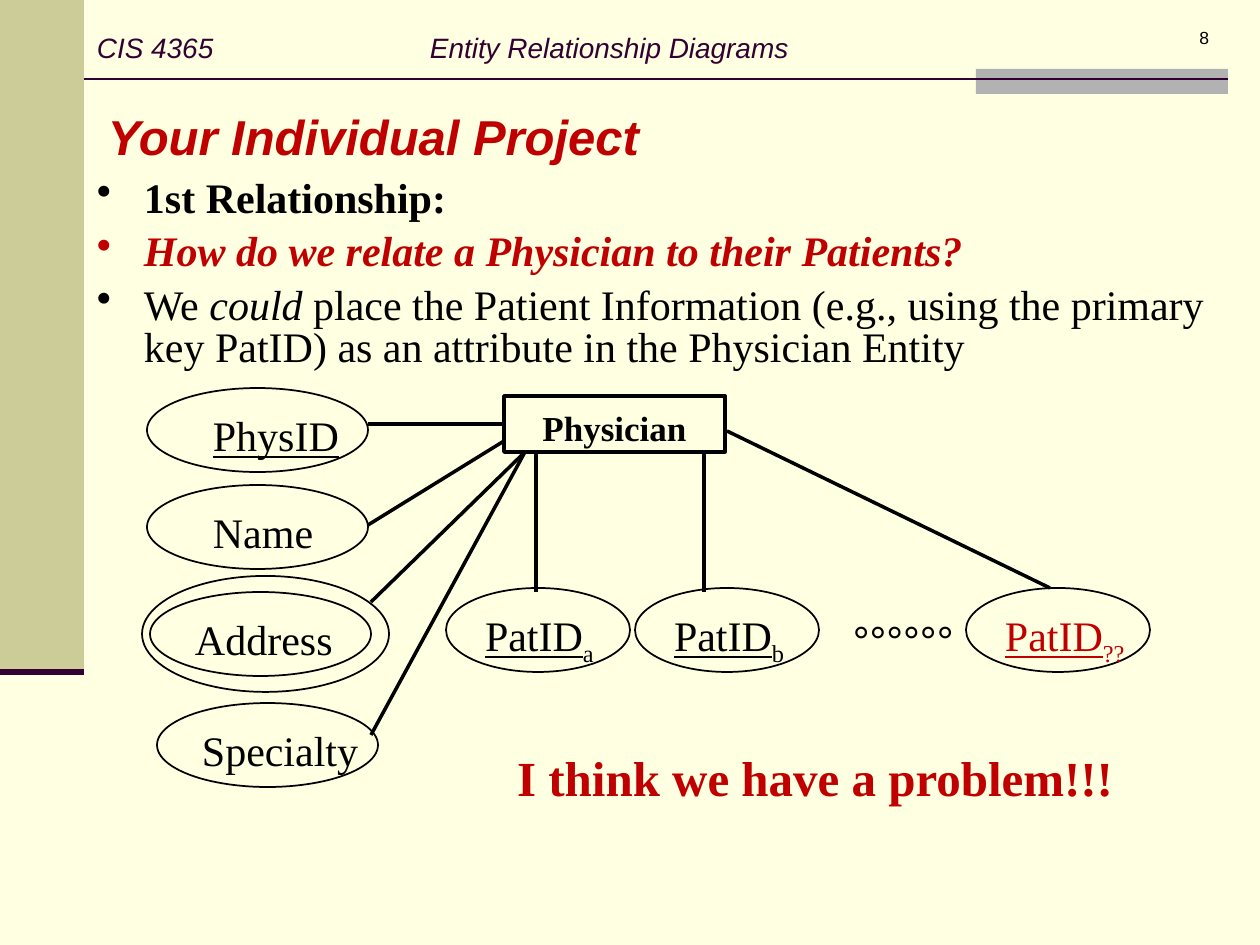
from dataclasses import dataclass
from typing import Optional

from lxml import etree
from pptx import Presentation, util as u
from pptx.dml.color import RGBColor
from pptx.enum import shapes, text
from pptx.oxml.ns import qn

PX = u.Inches(1) / 126


@dataclass(frozen=True)
class Theme:
    paper: str = "FFFFE1"
    band: str = "CCCC99"
    tab: str = "B2B2B2"
    plum: str = "330033"
    ink: str = "000000"
    red: str = "C00000"
    sans: str = "Arial"
    serif: str = "Times New Roman"
    tiny: int = 10
    header: int = 16
    entity: int = 20
    body: int = 24
    heading: int = 28


THEME = Theme()


@dataclass(frozen=True)
class Style:
    size: int = THEME.body
    color: str = THEME.ink
    face: str = THEME.serif
    bold: bool = False
    italic: bool = False


@dataclass(frozen=True)
class Span:
    words: str
    italic: Optional[bool] = None
    underline: Optional[bool] = None
    subscript: bool = False


@dataclass(frozen=True)
class Attribute:
    left: int
    top: int
    width: int
    spans: tuple[Span, ...]
    text_left: int
    indent: int = 0
    color: str = THEME.ink
    multivalued: bool = False


@dataclass(frozen=True)
class Link:
    x1: int
    y1: int
    x2: int
    y2: int
    joins_left_side: bool = False


KEY = Span("PatID", underline=True)
ATTRIBUTES = (
    Attribute(147, 388, 221, (Span("PhysID", underline=True),), 32, 21),
    Attribute(147, 485, 221, (Span("Name"),), 32, 21),
    Attribute(150, 592, 221, (Span("Address"),), 32, multivalued=True),
    Attribute(157, 703, 221, (Span("Specialty"),), 32),
    Attribute(446, 588, 184, (KEY, Span("a", subscript=True)), 26),
    Attribute(635, 588, 184, (KEY, Span("b", subscript=True)), 26),
    Attribute(966, 588, 184, (KEY, Span("??", subscript=True)), 26, color=THEME.red),
)
LINKS = (
    Link(368, 424, 504, 424, joins_left_side=True),
    Link(368, 525, 504, 441),
    Link(371, 602, 525, 452),
    Link(371, 735, 525, 452),
    Link(536, 592, 536, 452),
    Link(704, 592, 704, 452),
    Link(1050, 588, 727, 431),
)
BULLETS = (
    ((Span("1st Relationship:"),), Style(bold=True)),
    ((Span("How do we relate a Physician to their Patients?"),),
     Style(color=THEME.red, bold=True, italic=True)),
    ((Span("We "), Span("could", italic=True),
      Span(" place the Patient Information (e.g., using the primary key PatID)"
           " as an attribute in the Physician Entity")), Style()),
)


def emu(px: float) -> int:
    return round(px * PX)


def rgb(color: str) -> RGBColor:
    return RGBColor.from_string(color)


def place(shape, left: int, top: int, width: int, height: int) -> None:
    shape.left, shape.top = emu(left), emu(top)
    shape.width, shape.height = emu(width), emu(height)


def set_frame(shape, inset_top: int = 6, inset_left: int = 13,
              anchor=text.MSO_ANCHOR.TOP):
    frame = shape.text_frame
    frame.word_wrap = True
    frame.auto_size = text.MSO_AUTO_SIZE.NONE
    frame.vertical_anchor = anchor
    frame.margin_left, frame.margin_right = emu(inset_left), emu(13)
    frame.margin_top, frame.margin_bottom = emu(inset_top), emu(6)
    return frame


def write(para, spans: tuple[Span, ...], style: Style, align=text.PP_ALIGN.LEFT) -> None:
    para.alignment = align
    font = para.font
    font.size, font.name = u.Pt(style.size), style.face
    font.bold, font.italic = style.bold, style.italic
    font.color.rgb = rgb(style.color)
    for item in spans:
        span = para.add_run()
        span.text = item.words
        if item.italic is not None:
            span.font.italic = item.italic
        if item.underline is not None:
            span.font.underline = item.underline
        if item.subscript:
            span._r.get_or_add_rPr().set("baseline", "-25000")


def add_text(parent, area: tuple[int, int, int, int], spans: tuple[Span, ...],
             style: Style, align=text.PP_ALIGN.LEFT, **insets):
    box = parent.add_textbox(*map(emu, area))
    write(set_frame(box, **insets).paragraphs[0], spans, style, align)
    return box


def add_figure(parent, kind, area: tuple[int, int, int, int],
               fill: Optional[str] = None, line: float = 0):
    figure = parent.add_shape(kind, *map(emu, area))
    figure.shadow.inherit = False
    if fill:
        figure.fill.solid()
        figure.fill.fore_color.rgb = rgb(fill)
    else:
        figure.fill.background()
    if line:
        figure.line.width = u.Pt(line)
        figure.line.color.rgb = rgb(THEME.ink)
    else:
        figure.line.fill.background()
    return figure


def add_line(parent, link: Link, color: str = THEME.ink, width: float = 2):
    line = parent.add_connector(shapes.MSO_CONNECTOR.STRAIGHT,
                                *map(emu, (link.x1, link.y1, link.x2, link.y2)))
    line.line.width = u.Pt(width)
    line.line.color.rgb = rgb(color)
    etree.SubElement(line._element.spPr, qn("a:effectLst"))
    return line


def add_attribute(page, item: Attribute) -> None:
    parent = page.shapes.add_group_shape().shapes
    oval = shapes.MSO_SHAPE.OVAL
    if item.multivalued:
        add_figure(parent, oval, (item.left - 8, item.top - 16, item.width + 26, 116), line=1)
    add_figure(parent, oval, (item.left, item.top, item.width, 84), line=1)
    area = (item.left + item.text_left, item.top + 11, item.width - item.text_left, 63)
    add_text(parent, area, item.spans, Style(color=item.color),
             inset_top=11, inset_left=13 + item.indent)


def add_header(page) -> None:
    rect = shapes.MSO_SHAPE.RECTANGLE
    add_figure(page.shapes, rect, (0, 0, 84, 672), THEME.band)
    add_figure(page.shapes, rect, (976, 69, 252, 25), THEME.tab)
    add_line(page.shapes, Link(84, 79, 1228, 79), THEME.plum, 1.5)
    add_line(page.shapes, Link(0, 672, 84, 672), THEME.plum, 3.5)
    box = page.shapes.add_textbox(*map(emu, (84, 0, 1155, 95)))
    para = set_frame(box, anchor=text.MSO_ANCHOR.MIDDLE).paragraphs[0]
    tabs = etree.SubElement(para._p.get_or_add_pPr(), qn("a:tabLst"))
    etree.SubElement(tabs, qn("a:tab"), pos=str(emu(333)), algn="l")
    write(para, (Span("CIS 4365\tEntity Relationship Diagrams"),),
          Style(THEME.header, THEME.plum, THEME.sans, italic=True))
    add_text(page.shapes, (960, 21, 262, 63), (Span("8"),),
             Style(THEME.tiny, face=THEME.sans), text.PP_ALIGN.RIGHT)


def add_bullets(page) -> None:
    box = page.shapes.add_textbox(*map(emu, (84, 168, 1166, 205)))
    frame = set_frame(box, inset_top=11)
    for index, (spans, style) in enumerate(BULLETS):
        para = frame.add_paragraph() if index else frame.paragraphs[0]
        props = para._p.get_or_add_pPr()
        props.set("marL", str(emu(47)))
        props.set("indent", str(-emu(47)))
        etree.SubElement(props, qn("a:buChar"), char="•")
        para.line_spacing = 0.85
        if index:
            para.space_before = u.Pt(6)
        write(para, spans, style)


def main() -> None:
    deck = Presentation()
    deck.slide_width, deck.slide_height = emu(1260), emu(945)
    page = deck.slides.add_slide(deck.slide_layouts[5])
    page.background.fill.solid()
    page.background.fill.fore_color.rgb = rgb(THEME.paper)
    add_header(page)
    title = page.shapes.title
    place(title, 95, 95, 661, 72)
    write(set_frame(title, inset_top=11).paragraphs[0], (Span("Your Individual Project"),),
          Style(THEME.heading, THEME.red, THEME.sans, True, True))
    add_bullets(page)
    physician = add_figure(page.shapes, shapes.MSO_SHAPE.RECTANGLE, (504, 396, 221, 56), line=2)
    write(set_frame(physician, inset_top=10).paragraphs[0], (Span("Physician"),),
          Style(THEME.entity, bold=True), text.PP_ALIGN.CENTER)
    for item in ATTRIBUTES:
        add_attribute(page, item)
    for link in LINKS:
        line = add_line(page.shapes, link)
        if link.joins_left_side:
            line.end_connect(physician, 1)
    add_text(page.shapes, (840, 609, 189, 63), (Span("°°°°°°"),), Style(face=THEME.sans))
    add_text(page.shapes, (370, 736, 890, 72), (Span("I think we have a problem!!!"),),
             Style(THEME.heading, THEME.red, bold=True), text.PP_ALIGN.CENTER, inset_top=11)
    deck.save("out.pptx")


if __name__ == "__main__":
    main()
